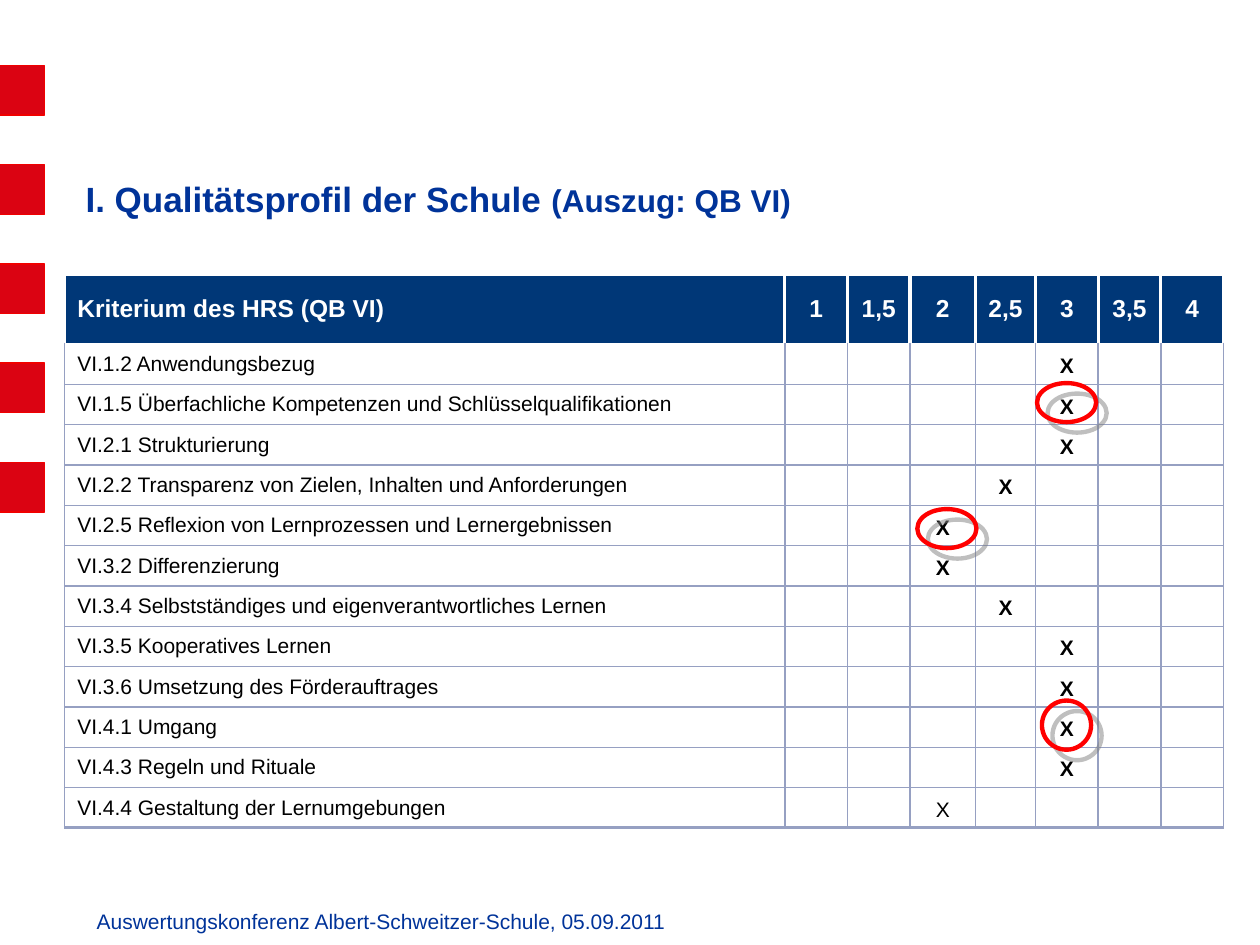
from lxml.etree import SubElement
from pptx import Presentation
from pptx.dml.color import RGBColor
from pptx.enum.shapes import MSO_SHAPE as Shape
from pptx.enum.text import MSO_ANCHOR as Anchor, PP_ALIGN as Align
from pptx.oxml.ns import qn
from pptx.util import Pt

# Content
TITLE = ("I. Qualitätsprofil der Schule ", "(Auszug: QB VI)")
FOOTER = "Auswertungskonferenz Albert-Schweitzer-Schule, 05.09.2011"
HEADER = ["Kriterium des HRS (QB VI)", "1", "1,5", "2", "2,5", "3", "3,5", "4"]
RATINGS = [
    ("VI.1.2 Anwendungsbezug", "3"),
    ("VI.1.5 Überfachliche Kompetenzen und Schlüsselqualifikationen", "3"),
    ("VI.2.1 Strukturierung", "3"),
    ("VI.2.2 Transparenz von Zielen, Inhalten und Anforderungen", "2,5"),
    ("VI.2.5 Reflexion von Lernprozessen und Lernergebnissen", "2"),
    ("VI.3.2 Differenzierung", "2"),
    ("VI.3.4 Selbstständiges und eigenverantwortliches Lernen", "2,5"),
    ("VI.3.5 Kooperatives Lernen", "3"),
    ("VI.3.6 Umsetzung des Förderauftrages", "3"),
    ("VI.4.1 Umgang", "3"),
    ("VI.4.3 Regeln und Rituale", "3"),
    ("VI.4.4 Gestaltung der Lernumgebungen", "2"),
]
COLORS = {
    "bar": "DB0312", "bar_line": "F00000", "text": "003399", "header": "003777",
    "white": "FFFFFF", "black": "000000", "grid": "96A0C2",
    "ring": "FF0000", "shadow": "808080",
}

# Layout in points
BAR_COUNT, BAR_TOP, BAR_STEP = 5, 37.4, 56.7
TABLE_LEFT, TABLE_TOP = 37, 157
COLUMNS = [411.5, 35.8, 35.8, 37.4, 34.4, 35.8, 35.8, 35.8]
HEADER_HEIGHT, ROW_HEIGHT = 39.6, 23
RINGS = [(524.2, 290.9, 33.8, 22.3), (595.4, 400.3, 28.1, 28.1),
         (592.6, 218.9, 33.8, 22.3)]


def color(name):
    return RGBColor.from_string(COLORS[name])


def add_text(para, text, size=12, fill="black", bold=False, align=Align.LEFT):
    para.alignment = align
    span = para.add_run()
    span.text = text
    span.font.name = "Arial"
    span.font.size = Pt(size)
    span.font.bold = bold
    span.font.color.rgb = color(fill)


def add_box(page, left, top, width, height, anchor):
    frame = page.shapes.add_textbox(Pt(left), Pt(top), Pt(width), Pt(height)).text_frame
    frame.word_wrap = True
    frame.vertical_anchor = anchor
    return frame.paragraphs[0]


def add_shape(page, kind, frame, line, width):
    shape = page.shapes.add_shape(kind, *(Pt(value) for value in frame))
    shape.shadow.inherit = False
    shape.fill.background()
    shape.line.color.rgb = color(line)
    shape.line.width = Pt(width)
    return shape


def set_borders(cell, **edges):
    properties = cell._tc.get_or_add_tcPr()
    for side in "LRTB":
        name, width = edges[side]
        line = SubElement(properties, qn(f"a:ln{side}"), w=str(Pt(width)))
        fill = SubElement(line, qn("a:solidFill"))
        SubElement(fill, qn("a:srgbClr"), val=COLORS[name])


def add_ring(page, frame):
    ring = add_shape(page, Shape.OVAL, frame, "ring", 2.5)
    effects = ring._element.spPr.find(qn("a:effectLst"))
    shadow = SubElement(effects, qn("a:outerShdw"), blurRad="0", dist=str(Pt(8.5)),
                        dir=str(45 * 60000), algn="ctr", rotWithShape="0")
    tone = SubElement(shadow, qn("a:srgbClr"), val=COLORS["shadow"])
    SubElement(tone, qn("a:alpha"), val="50000")


def fill_header(cell, text, column):
    set_borders(cell, **dict.fromkeys("LRTB", ("white", 2)))
    cell.fill.solid()
    cell.fill.fore_color.rgb = color("header")
    cell.vertical_anchor = Anchor.MIDDLE
    add_text(cell.text_frame.paragraphs[0], text, size=14, fill="white", bold=True,
             align=Align.CENTER if column else Align.LEFT)


def fill_rating(cell, row, column):
    label, grade = RATINGS[row - 1]
    last = row == len(RATINGS)
    grid = ("grid", 1)
    set_borders(cell, L=grid, R=grid, T=("white", 2) if row == 1 else grid,
                B=("grid", 2) if last else grid)
    cell.fill.background()
    para = cell.text_frame.paragraphs[0]
    if column == 0:
        cell.vertical_anchor = Anchor.MIDDLE
        add_text(para, label)
    elif HEADER[column] == grade:
        cell.vertical_anchor = Anchor.BOTTOM
        if not last:
            para.line_spacing = 1.1
        add_text(para, "X", bold=not last, align=Align.CENTER)
    else:
        # Small end mark keeps empty cells from stretching the row
        SubElement(para._p, qn("a:endParaRPr"), sz="1200")


def add_ratings_table(page):
    heights = [HEADER_HEIGHT] + [ROW_HEIGHT] * len(RATINGS)
    table = page.shapes.add_table(
        len(heights), len(COLUMNS), Pt(TABLE_LEFT), Pt(TABLE_TOP),
        Pt(sum(COLUMNS)), Pt(sum(heights))).table
    table.first_row = table.horz_banding = False
    for column, width in zip(table.columns, COLUMNS):
        column.width = Pt(width)
    for row, height in enumerate(heights):
        table.rows[row].height = Pt(height)
        for column, heading in enumerate(HEADER):
            cell = table.cell(row, column)
            if row == 0:
                fill_header(cell, heading, column)
            else:
                fill_rating(cell, row, column)


def main():
    deck = Presentation()
    deck.slide_width, deck.slide_height = Pt(720), Pt(540)
    page = deck.slides.add_slide(deck.slide_layouts[6])

    # Red bars on the left edge
    for index in range(BAR_COUNT):
        bar = add_shape(page, Shape.RECTANGLE,
                        (-0.7, BAR_TOP + index * BAR_STEP, 26, 28.4), "bar_line", 0.75)
        bar.fill.solid()
        bar.fill.fore_color.rgb = color("bar")

    # Footer and title
    footer = add_box(page, 48.2, 515.5, 561.6, 26, Anchor.TOP)
    add_text(footer, FOOTER, fill="text")
    title = add_box(page, 41.8, 87.8, 663.8, 51.8, Anchor.MIDDLE)
    for text, size in zip(TITLE, (20, 18)):
        add_text(title, text, size=size, fill="text", bold=True)

    # Ratings with highlighted marks
    add_ratings_table(page)
    for frame in RINGS:
        add_ring(page, frame)

    deck.save("out.pptx")


if __name__ == "__main__":
    main()
